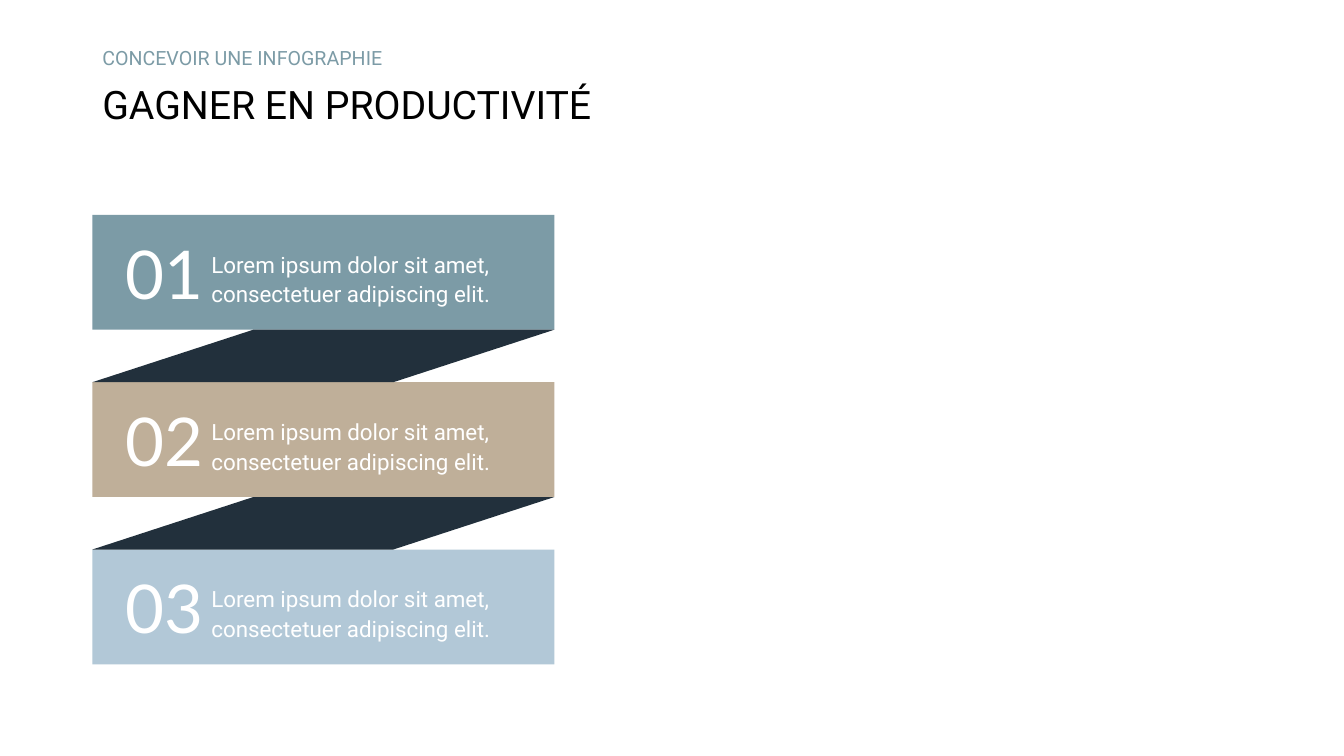
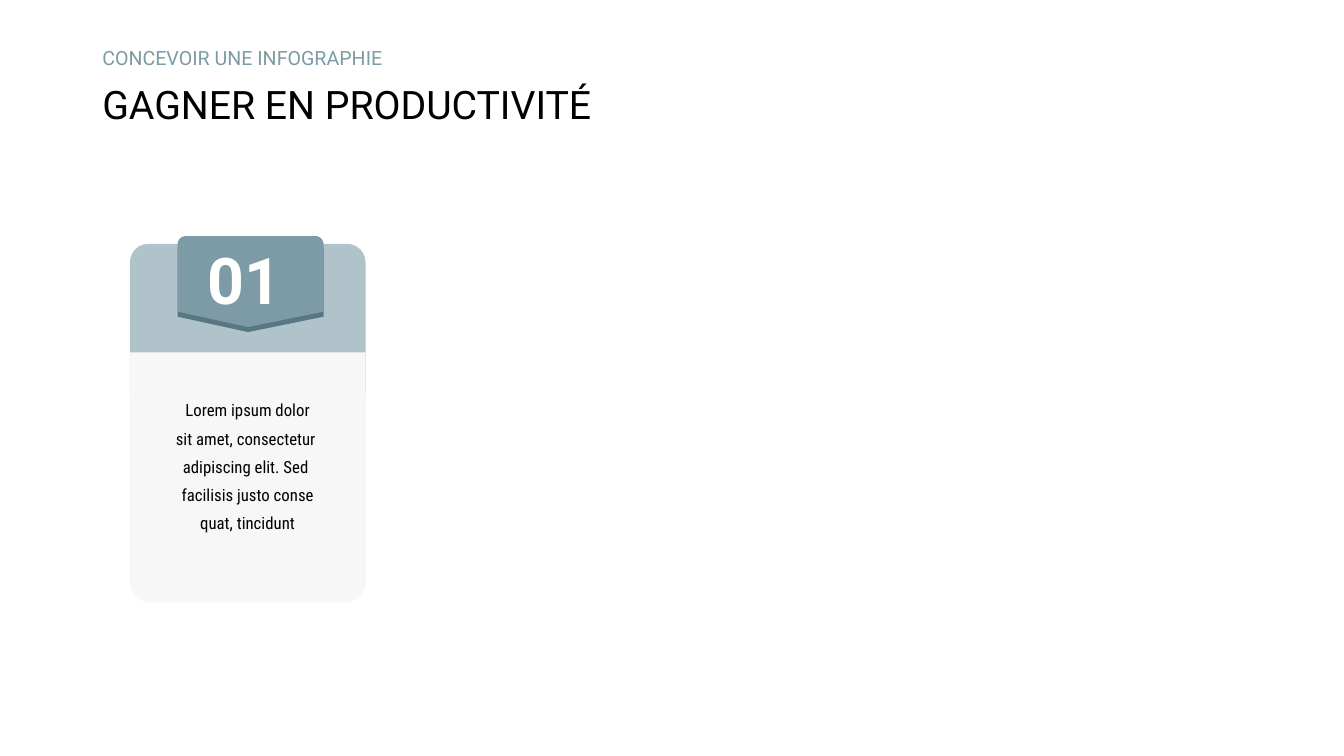
from dataclasses import dataclass
from math import cos, pi, sin

from pptx import Presentation
from pptx.dml.color import RGBColor
from pptx.enum.shapes import MSO_SHAPE as Preset
from pptx.enum.text import MSO_ANCHOR as Anchor, PP_ALIGN as Align
from pptx.util import Pt


@dataclass(frozen=True)
class Theme:
    black: str = "000000"
    white: str = "FFFFFF"
    teal: str = "7C9BA6"
    sand: str = "BFAF99"
    sky: str = "B2C8D7"
    navy: str = "22303C"
    pale_teal: str = "B0C3CA"
    deep_teal: str = "587782"
    light_gray: str = "F7F7F7"
    font: str = "Roboto"
    number_font: str = "Lato"
    narrow_font: str = "Roboto Condensed"
    title_size: float = 28
    kicker_size: float = 14
    number_size: float = 48
    badge_size: float = 46
    panel_size: float = 16
    card_size: float = 12


class Deck:
    def __init__(self, theme):
        self.theme = theme
        self.presentation = Presentation()
        self.presentation.slide_width = Pt(960)
        self.presentation.slide_height = Pt(540)
        self.slide = None

    def add_slide(self, title, kicker):
        theme = self.theme
        self.slide = self.presentation.slides.add_slide(self.presentation.slide_layouts[6])
        self.text([title], 66, 56, 828, 41, theme.title_size, theme.black, spacing=0.9)
        self.text([kicker], 66, 29, 828, 26, theme.kicker_size, theme.teal, spacing=0.9)

    def paint(self, shape, color):
        shape.shadow.inherit = False
        shape.fill.solid()
        shape.fill.fore_color.rgb = RGBColor.from_string(color)
        shape.line.fill.background()

    def shape(self, preset, left, top, width, height, color, adjustments=(), rotation=0):
        shape = self.slide.shapes.add_shape(preset, Pt(left), Pt(top), Pt(width), Pt(height))
        self.paint(shape, color)
        shape.rotation = rotation
        for index, value in enumerate(adjustments):
            shape.adjustments[index] = value

    def text(self, lines, left, top, width, height, size, color, font=None, bold=False,
             align=Align.LEFT, anchor=Anchor.MIDDLE, spacing=1.0, inset=(7.2, 3.6)):
        box = self.slide.shapes.add_textbox(Pt(left), Pt(top), Pt(width), Pt(height))
        frame = box.text_frame
        across, down = map(Pt, inset)
        frame_format = {"word_wrap": True, "vertical_anchor": anchor,
                        "margin_left": across, "margin_right": across,
                        "margin_top": down, "margin_bottom": down}
        for name, value in frame_format.items():
            setattr(frame, name, value)
        run_format = {"name": font or self.theme.font, "size": Pt(size), "bold": bold}
        for index, line in enumerate(lines):
            paragraph = frame.add_paragraph() if index else frame.paragraphs[0]
            paragraph.alignment = align
            paragraph.line_spacing = spacing
            run = paragraph.add_run()
            run.text = line
            for name, value in run_format.items():
                setattr(run.font, name, value)
            run.font.color.rgb = RGBColor.from_string(color)

    def panel(self, number, body, left, top, width, height, color):
        theme = self.theme
        self.shape(Preset.RECTANGLE, left, top, width, height, color)
        self.text([number], left + 23.5, top + 9, 63, 64, theme.number_size, theme.white,
                  font=theme.number_font, inset=(0, 0))
        self.text([body], left + 85, top + 9, 237, 72, theme.panel_size, theme.white,
                  spacing=1.1, inset=(0, 0))

    def badge(self, left, top, color, width=104.4, side=54, tip=65, tip_across=50.4, radius=6):
        """Draw a tag with two rounded top corners and a pointed bottom."""
        points = [(left + tip_across, top + tip), (left, top + side)]
        for center, start in ((left + radius, pi), (left + width - radius, 1.5 * pi)):
            for step in range(9):
                angle = start + step * pi / 16
                points.append((center + radius * cos(angle), top + radius + radius * sin(angle)))
        points.append((left + width, top + side))
        points = [(Pt(x), Pt(y)) for x, y in points]
        builder = self.slide.shapes.build_freeform(*points[0])
        builder.add_line_segments(points[1:], close=True)
        self.paint(builder.convert_to_shape(), color)

    def card(self, number, lines, left, top, width):
        theme = self.theme
        self.shape(Preset.ROUNDED_RECTANGLE, left, top, width, 119.5, theme.pale_teal, [0.11])
        for drop, color in ((-2, theme.deep_teal), (-5.6, theme.teal)):
            self.badge(left + 34, top + drop, color)
        self.text([number], left + 34, top - 6, 95, 62, theme.badge_size, theme.white,
                  bold=True, align=Align.CENTER, inset=(0, 0))
        self.shape(Preset.ROUND_2_SAME_RECTANGLE, left, top + 77.5, width, 178.5,
                   theme.light_gray, [0.085, 0], rotation=180)
        self.text(lines, left + 14.6, top + 102.3, 139, 124.6, theme.card_size, theme.black,
                  font=theme.narrow_font, align=Align.CENTER, anchor=Anchor.TOP, spacing=1.4)


def add_ribbon_slide(deck):
    theme = deck.theme
    left, first_top, width, height, pitch = 66, 153.5, 330, 82, 119.5
    gap, slant = pitch - height, 115
    colors = (theme.teal, theme.sand, theme.sky)
    for index, color in enumerate(colors):
        deck.panel(f"{index + 1:02}", "Lorem ipsum dolor sit amet, consectetuer adipiscing elit.",
                   left, first_top + index * pitch, width, height, color)
    for index in range(len(colors) - 1):
        deck.shape(Preset.PARALLELOGRAM, left, first_top + index * pitch + height, width, gap,
                   theme.navy, [slant / gap])


def add_card_slide(deck):
    deck.card("01", ["Lorem ipsum dolor", "sit amet, consectetur ", "adipiscing elit. Sed ",
                     "facilisis justo conse", "quat, tincidunt"], 92.8, 174.2, 168.3)


def main():
    deck = Deck(Theme())
    for add_content in (add_ribbon_slide, add_card_slide):
        deck.add_slide("GAGNER EN PRODUCTIVITÉ", "CONCEVOIR UNE INFOGRAPHIE")
        add_content(deck)
    deck.presentation.save("out.pptx")


if __name__ == "__main__":
    main()
